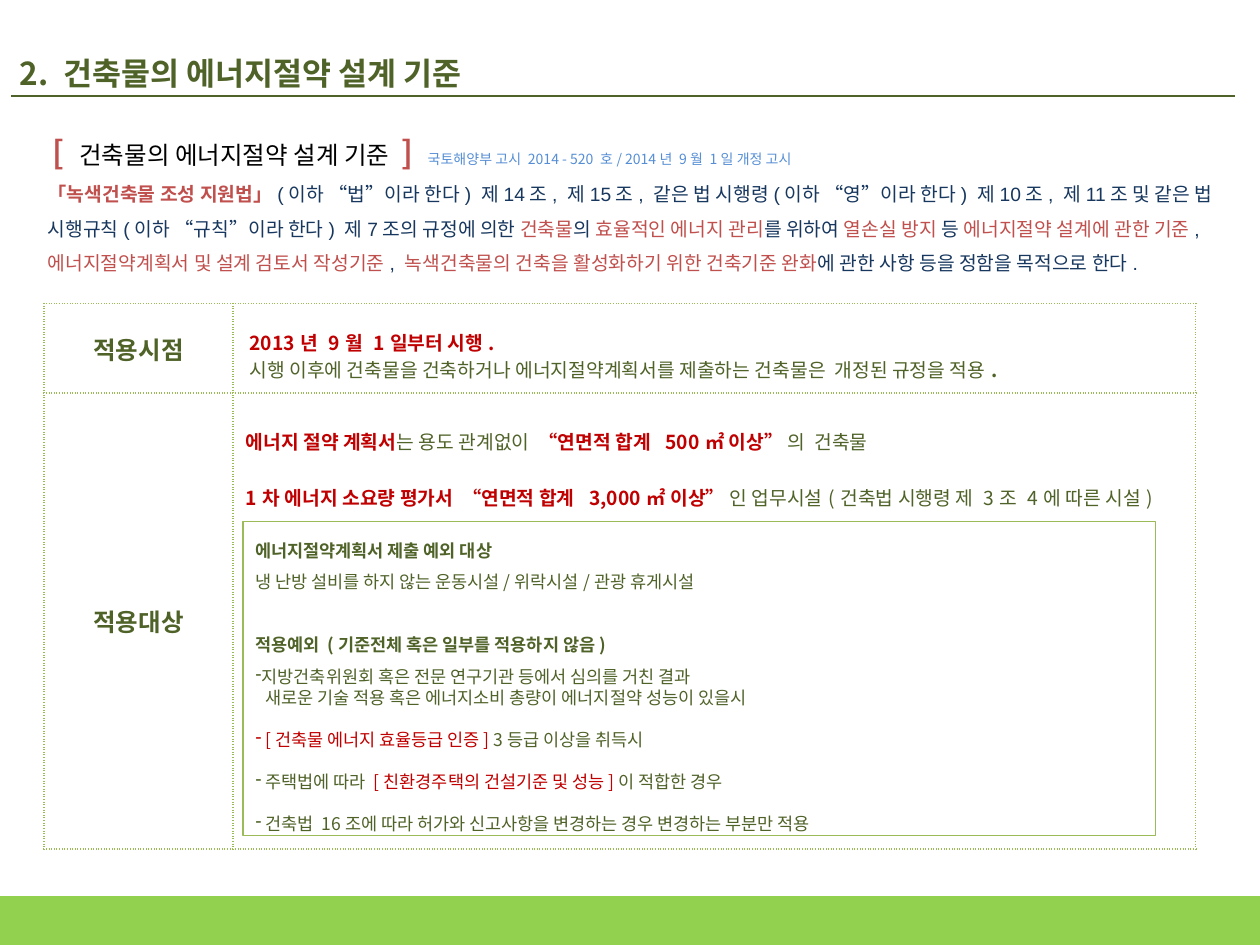
import pptx
import pptx.util
import pptx.dml.color
import pptx.enum.shapes
import pptx.enum.text
import pptx.oxml
import pptx.oxml.ns

Inches = pptx.util.Inches
Pt = pptx.util.Pt
RGBColor = pptx.dml.color.RGBColor
Anchor = pptx.enum.text.MSO_ANCHOR
Align = pptx.enum.text.PP_ALIGN
qn = pptx.oxml.ns.qn

BAND_GREEN = RGBColor(0x92, 0xD0, 0x50)
BORDER_GREEN = RGBColor(0x9B, 0xBB, 0x59)
DARK_GREEN = RGBColor(0x4F, 0x62, 0x28)
CORAL = RGBColor(0xC0, 0x50, 0x4D)
CRIMSON = RGBColor(0xC0, 0x00, 0x00)
NAVY = RGBColor(0x17, 0x37, 0x5E)
SKY = RGBColor(0x55, 0x8E, 0xD5)
BLACK = RGBColor(0, 0, 0)
KOREAN_FONT = "Noto Sans CJK KR"


def sub_element(parent, tag, **attributes):
    child = parent.makeelement(qn(tag), attributes)
    parent.append(child)
    return child


def set_font(font, size=None, color=None, bold=None):
    if size:
        font.size = Pt(size)
    if color is not None:
        font.color.rgb = color
    if bold is not None:
        font.bold = bold


def write_paragraph(paragraph, runs, size=None, latin=KOREAN_FONT, line=None,
                    before=None, align=Align.LEFT, indent=0, bullet=False):
    paragraph.alignment = align
    if line:
        paragraph.line_spacing = Pt(line)
    if before:
        paragraph.space_before = Pt(before)
    properties = paragraph._p.get_or_add_pPr()
    if indent:
        properties.set("marL", str(Inches(indent)))
        properties.set("indent", str(-Inches(indent) if bullet else 0))
    if bullet:
        sub_element(properties, "a:buChar", char="-")
    paragraph.font.name = latin
    set_font(paragraph.font, size)
    sub_element(properties.find(qn("a:defRPr")), "a:ea", typeface=KOREAN_FONT)
    styles = {run[1:] for run in runs}
    if len(styles) == 1:
        set_font(paragraph.font, *reversed_style(runs[0]))
    for run in runs:
        part = paragraph.add_run()
        part.text = run[0]
        if len(styles) > 1:
            set_font(part.font, *reversed_style(run))


def reversed_style(run):
    color, bold, *own_size = run[1:]
    return (own_size[0] if own_size else None), color, bold


def write_paragraphs(frame, paragraphs):
    frame.word_wrap = True
    for index, (runs, layout) in enumerate(paragraphs):
        paragraph = frame.paragraphs[0] if index == 0 else frame.add_paragraph()
        write_paragraph(paragraph, runs, **layout)


def add_text(slide, left, top, width, height, paragraphs):
    box = slide.shapes.add_textbox(Inches(left), Inches(top), Inches(width), Inches(height))
    write_paragraphs(box.text_frame, paragraphs)


def add_rectangle(slide, left, top, width, height, line, line_width, fill=None):
    rectangle = slide.shapes.add_shape(
        pptx.enum.shapes.MSO_SHAPE.RECTANGLE,
        Inches(left), Inches(top), Inches(width), Inches(height))
    rectangle.shadow.inherit = False
    if fill is None:
        rectangle.fill.background()
    else:
        rectangle.fill.solid()
        rectangle.fill.fore_color.rgb = fill
    rectangle.line.color.rgb = line
    rectangle.line.width = Pt(line_width)
    return rectangle


def add_rule(slide, left, right, top):
    rule = slide.shapes.add_connector(
        pptx.enum.shapes.MSO_CONNECTOR.STRAIGHT,
        Inches(left), Inches(top), Inches(right), Inches(top))
    rule.line.color.rgb = DARK_GREEN
    rule.line.width = Pt(1.25)
    sub_element(rule._element.spPr, "a:effectLst")


def border_cell(cell):
    properties = cell._tc.get_or_add_tcPr()
    for side in ("a:lnL", "a:lnR", "a:lnT", "a:lnB"):
        border = sub_element(properties, side, w=str(Pt(1)))
        fill = sub_element(border, "a:solidFill")
        sub_element(fill, "a:srgbClr", val=str(BORDER_GREEN))
        sub_element(border, "a:prstDash", val="sysDot")
    cell.fill.background()


def add_scope_table(slide, rows, left, top, widths, heights):
    table = slide.shapes.add_table(
        len(heights), len(widths), Inches(left), Inches(top),
        Inches(sum(widths)), Inches(sum(heights))).table
    table.first_row = table.horz_banding = False
    for column, width in zip(table.columns, widths):
        column.width = Inches(width)
    for row, height, (heading, details) in zip(table.rows, heights, rows):
        row.height = Inches(height)
        label, content = row.cells
        border_cell(label)
        border_cell(content)
        label.vertical_anchor = Anchor.MIDDLE
        write_paragraphs(label.text_frame, [
            ([(heading, DARK_GREEN, True)], dict(size=14, align=Align.CENTER))])
        write_paragraphs(content.text_frame, details)
    return table


def main():
    deck = pptx.Presentation()
    deck.slide_width, deck.slide_height = Inches(10), Inches(7.5)
    slide = deck.slides.add_slide(deck.slide_layouts[6])

    add_rectangle(slide, 0, 7.12, 10, 0.38, BAND_GREEN, 1, BAND_GREEN)

    purpose = [
        ("「녹색건축물 조성 지원법」", CORAL, True),
        ("(이하 “법”이라 한다) 제14조, 제15조, 같은 법 시행령(이하 “영”이라 한다) "
         "제10조, 제11조 및 같은 법 시행규칙(이하 “규칙”이라 한다) 제7조의 규정에 의한 ", NAVY, False),
        ("건축물", CORAL, False),
        ("의 ", NAVY, False),
        ("효율적인 에너지 관리", CORAL, False),
        ("를 위하여 ", NAVY, False),
        ("열손실 방지", CORAL, False),
        (" 등 ", NAVY, False),
        ("에너지절약 설계에 관한 기준", CORAL, False),
        (", ", NAVY, False),
        ("에너지절약계획서 및 설계 검토서 작성기준", CORAL, False),
        (", ", NAVY, False),
        ("녹색건축물의 건축을 활성화하기 위한 건축기준 완화", CORAL, False),
        ("에 관한 사항 등을 정함을 목적으로 한다.", NAVY, False)]
    notice = [
        ("[ ", CORAL, True, 18),
        ("건축물의 에너지절약 설계 기준 ", BLACK, False, 14),
        ("] ", CORAL, True, 18),
        ("국토해양부 고시 2014 - 520 호/ 2014년 9월 1일 개정 고시", SKY, False, 8)]
    add_text(slide, 0.28, 0.99, 9.61, 1.57, [
        (notice, dict(line=23, indent=0.04)),
        (purpose, dict(size=11, latin="Arial", line=19.7))])

    add_text(slide, 0.06, 0.35, 9.74, 0.4, [
        ([("2. 건축물의 에너지절약 설계 기준", DARK_GREEN, True)], dict(size=18, line=23.5))])
    add_rule(slide, 0.09, 9.8, 0.76)

    effective_date = [
        ([("2013년 9월 1일부터 시행.", CRIMSON, True)], dict(size=11, line=24)),
        ([("시행 이후에 건축물을 건축하거나 에너지절약계획서를 제출하는 건축물은  개정된 규정을 적용",
           DARK_GREEN, False), (".", DARK_GREEN, True)], dict(size=11, line=15.5))]
    targets = [
        ([("에너지 절약 계획서", CRIMSON, True),
          ("는 용도 관계없이  ", DARK_GREEN, False),
          ("“연면적 합계  500㎡ 이상” ", CRIMSON, True),
          ("의  건축물", DARK_GREEN, False)], dict(size=11, line=16)),
        ([("1차 에너지 소요량 평가서  “연면적 합계  3,000㎡ 이상” ", CRIMSON, True),
          ("인 업무시설(건축법 시행령 제 3조 4에 따른 시설)", DARK_GREEN, False)],
         dict(size=11, line=16, before=16))]
    scope = add_scope_table(
        slide, [("적용시점", effective_date), ("적용대상", targets)],
        0.35, 2.41, (1.5, 7.64), (0.71, 3.62))
    scope.cell(0, 1).vertical_anchor = Anchor.MIDDLE
    scope.cell(0, 1).margin_left = Inches(0.13)
    scope.cell(1, 1).margin_top = Inches(0.27)

    exceptions = add_rectangle(slide, 1.93, 4.14, 7.24, 2.49, BORDER_GREEN, 0.75)
    exceptions.text_frame.vertical_anchor = Anchor.TOP
    exceptions.text_frame.margin_top = Inches(0.06)
    single, wide, double = (dict(size=10, line=points) for points in (12, 18, 24))
    item = dict(double, indent=0.08, bullet=True)
    write_paragraphs(exceptions.text_frame, [
        ([("에너지절약계획서 제출 예외 대상", DARK_GREEN, True)], wide),
        ([("냉 난방 설비를 하지 않는 운동시설/위락시설/관광 휴게시설", DARK_GREEN, False)], wide),
        ([("적용예외 (기준전체 혹은 일부를 적용하지 않음)", DARK_GREEN, True)],
         dict(wide, before=18)),
        ([("지방건축위원회 혹은 전문 연구기관 등에서 심의를 거친 결과", DARK_GREEN, False)],
         dict(wide, indent=0.05, bullet=True)),
        ([("새로운 기술 적용 혹은 에너지소비 총량이 에너지절약 성능이 있을시", DARK_GREEN, False)],
         dict(single, indent=0.08)),
        ([("[건축물 에너지 효율등급 인증] ", CRIMSON, False),
          ("3등급 이상을 취득시", DARK_GREEN, False)], item),
        ([("주택법에 따라 ", DARK_GREEN, False),
          ("[친환경주택의 건설기준 및 성능]", CRIMSON, False),
          ("이 적합한 경우", DARK_GREEN, False)], item),
        ([("건축법 16조에 따라 허가와 신고사항을 변경하는 경우 변경하는 부분만 적용",
           DARK_GREEN, False)], item)])

    deck.save("out.pptx")


if __name__ == "__main__":
    main()
